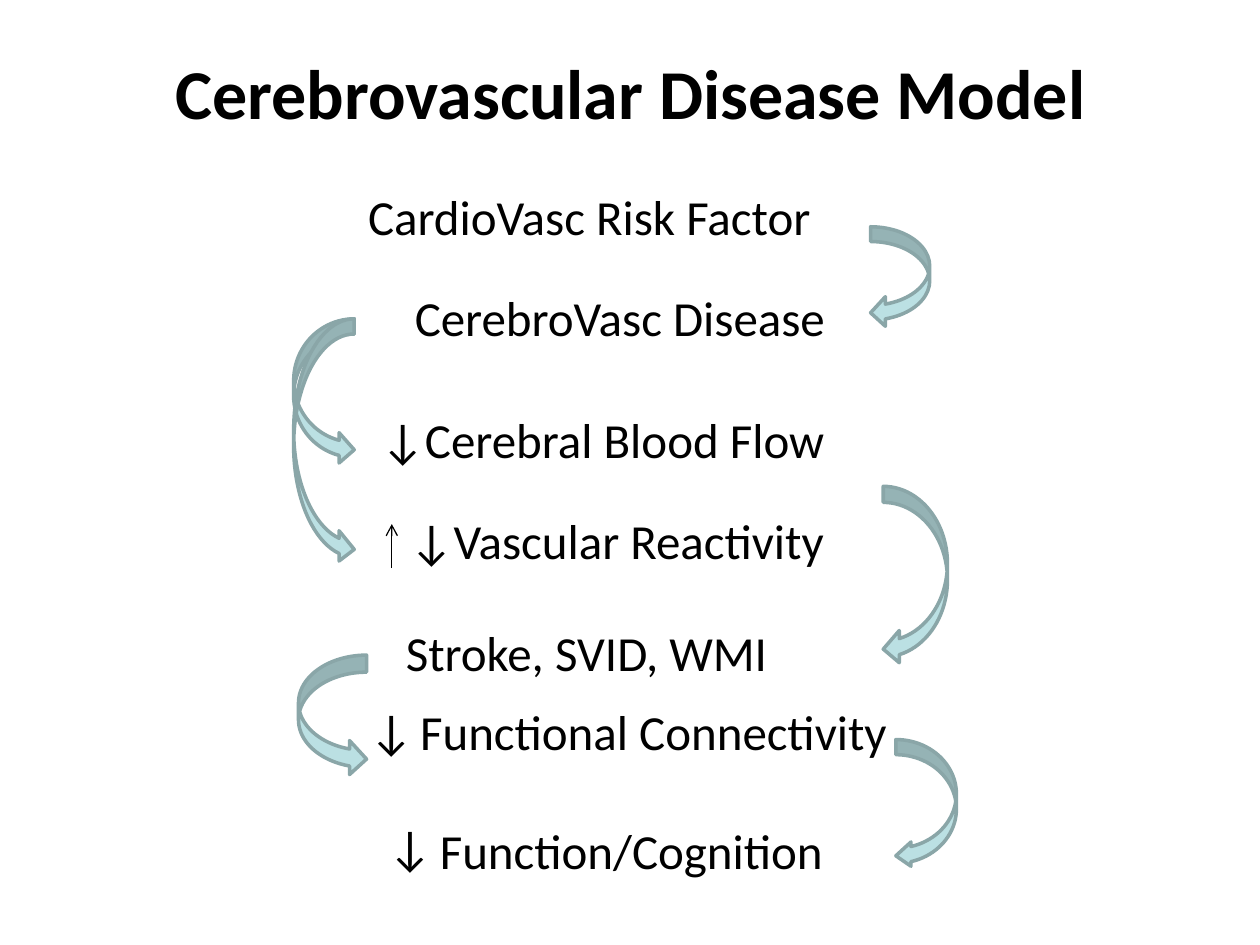
from dataclasses import dataclass

from pptx import Presentation, util as u
from pptx.dml import color as clr
from pptx.enum import shapes as sh, text as tx
from pptx.oxml import ns, xmlchemy as xc

Box = tuple[float, float, float, float]  # left, top, width, height in points
BLACK, TEAL, EDGE = "000000", "BBE0E3", "8AA6A8"
FONT = {"name": "Calibri", "size": u.Pt(28), "bold": False}
WIDE, SLIM = (8, 4.3), (7.2, 3.6)  # side and top insets


@dataclass
class Line:
    text: str
    indent: float = 0
    gap: float = 0


@dataclass
class Label:
    box: Box
    lines: list[Line]
    inset: tuple[float, float] = WIDE
    anchor: tx.MSO_ANCHOR = tx.MSO_ANCHOR.BOTTOM
    align: tx.PP_ALIGN = tx.PP_ALIGN.LEFT


@dataclass
class Bend:
    box: Box
    left: bool
    neck: float = 0.5


LABELS = [
    Label((202.3, 102.2, 272.2, 42.5), [Line("CardioVasc Risk Factor")]),
    Label((229, 159.8, 253.4, 42.5), [Line("CerebroVasc Disease")]),
    Label((209.5, 229.7, 272.9, 42.5), [Line("↓Cerebral Blood Flow")]),
    Label((219.6, 287.3, 262.8, 42.5), [Line("↓Vascular Reactivity", 6.3)]),
    Label((223.9, 351.4, 225.4, 42.5), [Line("Stroke, SVID, WMI")]),
    Label((204.5, 396.7, 312.5, 110.2),
          [Line("Functional Connectivity", 25.3), Line("Function/Cognition", gap=34.2)],
          align=tx.PP_ALIGN.CENTER),
    Label((203.8, 396.7, 46.8, 41), [Line("↓")], SLIM, tx.MSO_ANCHOR.TOP),
    Label((214.6, 463, 40.3, 41), [Line("↓")], SLIM, tx.MSO_ANCHOR.TOP),
]
BENDS = [
    Bend((497.5, 129.6, 33.8, 57.6), True),
    Bend((167.8, 182.2, 34.6, 83.5), False),
    Bend((504.7, 277.9, 36.7, 102.2), True),
    Bend((167.8, 182.2, 34.6, 140.4), False),
    Bend((511.9, 422.6, 34.6, 73.4), True, 0.4),
    Bend((170.6, 374.4, 38.9, 69.1), False),
]


def rgb(code: str) -> clr.RGBColor:
    return clr.RGBColor.from_string(code)


def pts(vals) -> list[u.Pt]:
    return [u.Pt(v) for v in vals]


def apply(obj, vals: dict) -> None:
    for key, val in vals.items():
        setattr(obj, key, val)


def style(font, **more) -> None:
    apply(font, FONT | more)
    font.color.rgb = rgb(BLACK)


def add_label(slide, label: Label) -> None:
    frame = slide.shapes.add_textbox(*pts(label.box)).text_frame
    side, top = pts(label.inset)
    apply(frame, {
        "word_wrap": False, "auto_size": tx.MSO_AUTO_SIZE.SHAPE_TO_FIT_TEXT,
        "vertical_anchor": label.anchor, "margin_left": side,
        "margin_right": side, "margin_top": top, "margin_bottom": top,
    })
    for i, line in enumerate(label.lines):
        para = frame.add_paragraph() if i else frame.paragraphs[0]
        apply(para, {"alignment": label.align, "space_before": u.Pt(line.gap)})
        if line.indent:
            para._p.get_or_add_pPr().set("marL", str(u.Pt(line.indent)))
        run = para.add_run()
        run.text = line.text
        style(run.font)


def add_bend(slide, bend: Bend) -> None:
    kind = sh.MSO_SHAPE
    form = kind.CURVED_LEFT_ARROW if bend.left else kind.CURVED_RIGHT_ARROW
    arrow = slide.shapes.add_shape(form, *pts(bend.box))
    arrow.shadow.inherit = False
    if bend.neck != 0.5:
        arrow.adjustments[1] = bend.neck
    arrow.fill.solid()
    arrow.fill.fore_color.rgb = rgb(TEAL)
    arrow.line.color.rgb = rgb(EDGE)
    arrow.line.width = u.Pt(2)


def add_rise(slide, x: float, low: float, high: float) -> None:
    """Draw a thin arrow that points straight up."""
    rise = slide.shapes.add_connector(sh.MSO_CONNECTOR.STRAIGHT, *pts((x, low, x, high)))
    rise.line.color.rgb = rgb(BLACK)
    rise.line.width = u.Pt(0.75)
    tip = xc.OxmlElement("a:tailEnd")
    tip.set("type", "arrow")
    rise.line._get_or_add_ln().append(tip)
    rise._element.find(ns.qn("p:spPr")).append(xc.OxmlElement("a:effectLst"))


def add_title(slide, words: str, box: Box) -> None:
    title = slide.shapes.title
    apply(title, dict(zip(("left", "top", "width", "height"), pts(box))))
    title.text_frame.vertical_anchor = tx.MSO_ANCHOR.MIDDLE
    para = title.text_frame.paragraphs[0]
    para.alignment = tx.PP_ALIGN.CENTER
    run = para.add_run()
    run.text = words
    style(run.font, size=u.Pt(40), bold=True)


def main() -> None:
    deck = Presentation()
    apply(deck, {"slide_width": u.Pt(720), "slide_height": u.Pt(540)})
    slide = deck.slides.add_slide(deck.slide_layouts.get_by_name("Title Only"))
    add_title(slide, "Cerebrovascular Disease Model", (66.2, 14.4, 588.2, 75.6))
    for label in LABELS:
        add_label(slide, label)
    for bend in BENDS:
        add_bend(slide, bend)
    add_rise(slide, 223.9, 324.7, 299.5)
    deck.save("out.pptx")


if __name__ == "__main__":
    main()
